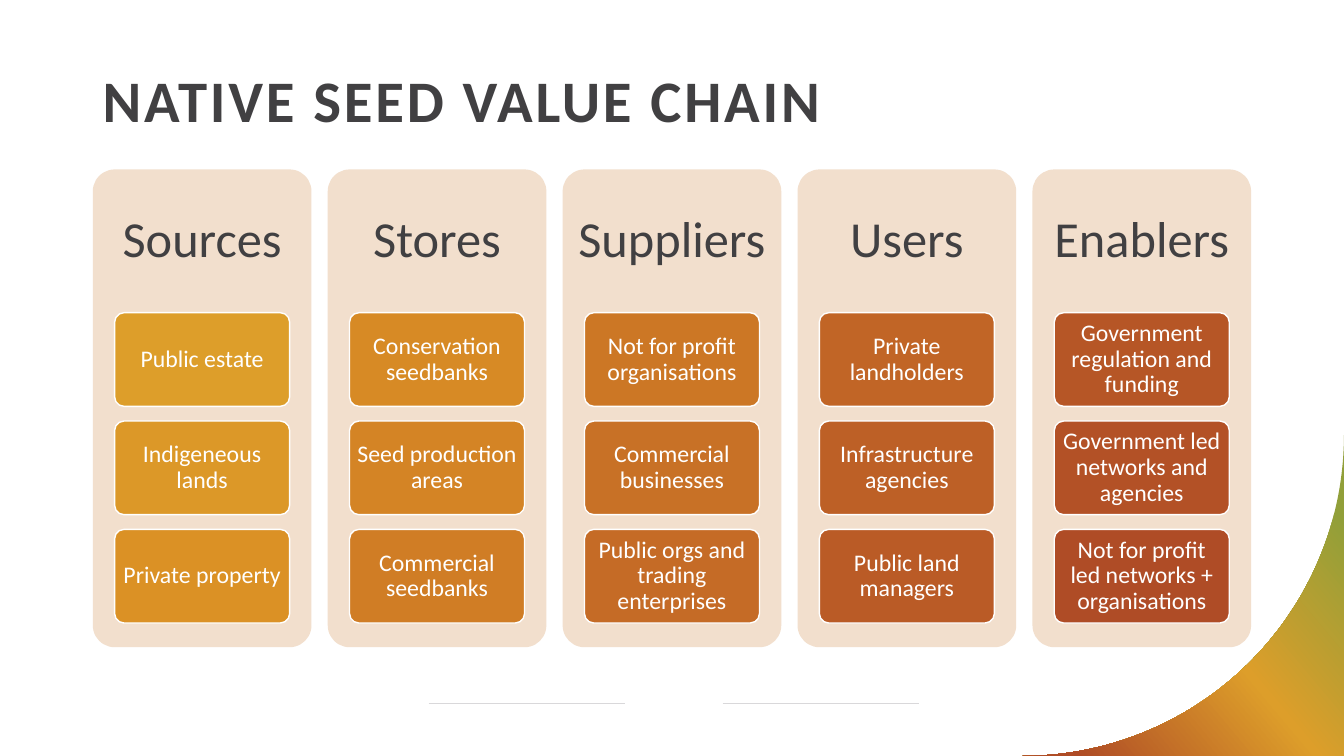
from colorsys import hls_to_rgb, rgb_to_hls
from dataclasses import dataclass
from math import cos, pi, sin

from lxml.etree import SubElement
from pptx import Presentation
from pptx.dml.color import RGBColor as Rgb
from pptx.enum.shapes import MSO_CONNECTOR as Connector, MSO_SHAPE as Preset
from pptx.enum.text import MSO_ANCHOR as Anchor, PP_ALIGN as Align
from pptx.oxml import parse_xml
from pptx.oxml.ns import nsdecls, qn
from pptx.shapes.autoshape import Shape
from pptx.slide import Slide
from pptx.util import Cm, Pt

COLORS = {
    "ink": "414042",
    "white": "FFFFFF",
    "panel": "F2DFCD",
    "rule": "D9D8DA",
    "green": "919F39",
    "gold": "DD9E2A",
    "rust": "AF4C26",
}
FONT = "Calibri"
PAGE_WIDTH, PAGE_HEIGHT = 33.87, 19.05
LEFT, TOP = 2.34, 4.27
COLUMN_WIDTH, COLUMN_HEIGHT, COLUMN_PITCH = 5.51, 12.04, 5.92
HEADING_HEIGHT = 3.61
CARD_TOP, CARD_PITCH = 7.88, 2.73
CARD_WIDTH, CARD_HEIGHT = 4.41, 2.36
CARD_INDENT = (COLUMN_WIDTH - CARD_WIDTH) / 2
CORNER_RADIUS = 8.09


@dataclass(frozen=True)
class Column:
    heading: str
    cards: tuple[str, ...]


COLUMNS = (
    Column("Sources", ("Public estate", "Indigeneous lands", "Private property")),
    Column("Stores", ("Conservation seedbanks", "Seed production areas", "Commercial seedbanks")),
    Column("Suppliers", ("Not for profit organisations", "Commercial businesses",
                         "Public orgs and trading enterprises")),
    Column("Users", ("Private landholders", "Infrastructure agencies", "Public land managers")),
    Column("Enablers", ("Government regulation and funding", "Government led networks and agencies",
                        "Not for profit led networks + organisations")),
)


def blend(start: str, end: str, share: float) -> str:
    first, last = (
        rgb_to_hls(*(part / 255 for part in Rgb.from_string(color)))
        for color in (start, end)
    )
    mixed = (a + (b - a) * share for a, b in zip(first, last))
    return "".join(f"{round(part * 255):02X}" for part in hls_to_rgb(*mixed))


def write_text(box: Shape, text: str, *, size: float, color: str,
               bold: bool = False, spacing: float = 0, align: Align = Align.CENTER,
               anchor: Anchor = Anchor.MIDDLE,
               inset: tuple[float, float] = (0.12, 0.1)) -> None:
    frame = box.text_frame
    frame.word_wrap = True
    frame.vertical_anchor = anchor
    frame.margin_left = frame.margin_right = Cm(inset[0])
    frame.margin_top = frame.margin_bottom = Cm(inset[1])
    para = frame.paragraphs[0]
    para.alignment = align
    para.line_spacing = 0.9
    span = para.add_run()
    span.text = text
    span.font.name = FONT
    span.font.size = Pt(size)
    span.font.bold = bold
    span.font.color.rgb = Rgb.from_string(color)
    if spacing:
        span._r.get_or_add_rPr().set("spc", str(round(spacing * 100)))


def add_text_box(page: Slide, left: float, top: float, width: float, height: float) -> Shape:
    return page.shapes.add_textbox(Cm(left), Cm(top), Cm(width), Cm(height))


def add_panel(page: Slide, left: float, top: float, width: float, height: float,
              fill: str, outline: str = "") -> Shape:
    panel = page.shapes.add_shape(
        Preset.ROUNDED_RECTANGLE, Cm(left), Cm(top), Cm(width), Cm(height))
    panel.adjustments[0] = 0.1
    panel.shadow.inherit = False
    panel.fill.solid()
    panel.fill.fore_color.rgb = Rgb.from_string(fill)
    if outline:
        panel.line.color.rgb = Rgb.from_string(outline)
        panel.line.width = Pt(1)
    else:
        panel.line.fill.background()
    return panel


def add_footer_rule(page: Slide, left: float) -> None:
    top = Cm(17.73)
    rule = page.shapes.add_connector(Connector.STRAIGHT, Cm(left), top, Cm(left + 4.95), top)
    rule.line.color.rgb = Rgb.from_string(COLORS["rule"])
    rule.line.width = Pt(0.5)
    SubElement(rule._element.spPr, qn("a:effectLst"))


def add_corner(page: Slide) -> None:
    center_x, center_y = PAGE_WIDTH - CORNER_RADIUS, PAGE_HEIGHT - CORNER_RADIUS
    steps = 90
    angles = [step / steps * pi / 2 for step in range(steps + 1)]
    arc = [(Cm(center_x + CORNER_RADIUS * cos(angle)), Cm(center_y + CORNER_RADIUS * sin(angle)))
           for angle in angles]
    builder = page.shapes.build_freeform(*arc[0])
    builder.add_line_segments(arc[1:] + [(Cm(PAGE_WIDTH), Cm(PAGE_HEIGHT))], close=True)
    corner = builder.convert_to_shape()
    corner.shadow.inherit = False
    corner.line.fill.background()
    corner.fill.gradient()
    stops = "".join(
        f'<a:gs pos="{place * 1000}"><a:srgbClr val="{COLORS[name]}"/></a:gs>'
        for place, name in ((12, "green"), (50, "gold"), (91, "rust")))
    gradient = parse_xml(
        f'<a:gradFill {nsdecls("a")} rotWithShape="1"><a:gsLst>{stops}</a:gsLst>'
        f'<a:lin ang="{140 * 60000}" scaled="0"/></a:gradFill>')
    properties = corner._element.spPr
    properties.replace(properties.find(qn("a:gradFill")), gradient)


def add_column(page: Slide, index: int, column: Column) -> None:
    left = LEFT + index * COLUMN_PITCH
    add_panel(page, left, TOP, COLUMN_WIDTH, COLUMN_HEIGHT, COLORS["panel"])
    heading = add_text_box(page, left, TOP, COLUMN_WIDTH, HEADING_HEIGHT)
    write_text(heading, column.heading, size=36, color=COLORS["ink"], inset=(0.38, 0.38))
    last_card = sum(len(each.cards) for each in COLUMNS) - 1
    for row, text in enumerate(column.cards):
        share = (index * len(column.cards) + row) / last_card
        card = add_panel(page, left + CARD_INDENT, CARD_TOP + row * CARD_PITCH,
                         CARD_WIDTH, CARD_HEIGHT,
                         blend(COLORS["gold"], COLORS["rust"], share), COLORS["white"])
        write_text(card, text, size=17, color=COLORS["white"])


def main() -> None:
    deck = Presentation()
    deck.slide_width, deck.slide_height = Cm(PAGE_WIDTH), Cm(PAGE_HEIGHT)
    page = deck.slides.add_slide(deck.slide_layouts[6])
    for left in (10.8, 18.21):
        add_footer_rule(page, left)
    add_corner(page)
    title = add_text_box(page, LEFT, 1.68, 29.21, 2.59)
    write_text(title, "NATIVE SEED VALUE CHAIN", size=42, color=COLORS["ink"], bold=True,
               spacing=2, align=Align.LEFT, anchor=Anchor.TOP, inset=(0.25, 0.13))
    for index, column in enumerate(COLUMNS):
        add_column(page, index, column)
    deck.save("out.pptx")


if __name__ == "__main__":
    main()
